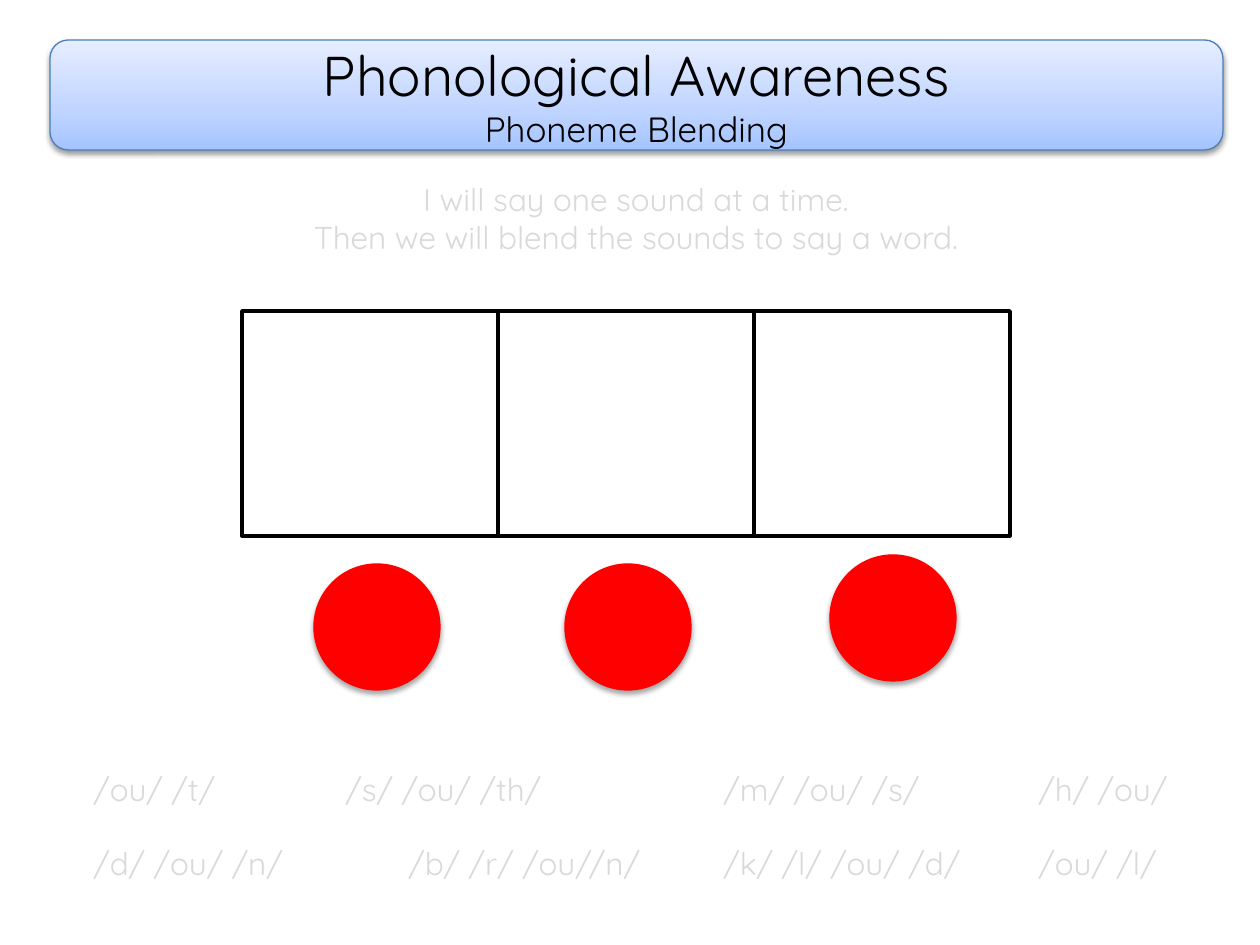
from lxml.etree import SubElement
from pptx import Presentation
from pptx.dml.color import RGBColor
from pptx.enum.shapes import MSO_SHAPE
from pptx.enum.text import MSO_ANCHOR, MSO_AUTO_SIZE, PP_ALIGN
from pptx.oxml import parse_xml
from pptx.oxml.ns import nsdecls, qn
from pptx.util import Pt

# Content
HEADING = [("Phonological Awareness", 32), ("Phoneme Blending", 20)]
INSTRUCTIONS = ["I will say one sound at a time.",
                "Then we will blend the sounds to say a word."]
WORD_ROWS = [  # words, tab stops in px, space before in pt
    (["/ou/ /t/", "/s/ /ou/ /th/", "/m/ /ou/ /s/", "/h/ /ou/"],
     [252, 630, 945], 0),
    (["/d/ /ou/ /n/", "/b/ /r/ /ou//n/", "/k/ /l/ /ou/ /d/", "/ou/ /l/"],
     [315, 630, 945], 20.5),
]
SOUND_BOXES = 3
COUNTERS = [(314, 564), (565, 564), (830, 555)]

# Style
FONT = "Quicksand"
BLACK = RGBColor(0, 0, 0)
WHITE = RGBColor(255, 255, 255)
RED = RGBColor(255, 0, 0)
GREY = RGBColor(0xD9, 0xD9, 0xD9)
BLUE = RGBColor(0x4B, 0x7E, 0xBC)
BANNER_STOPS = [(0, RGBColor(0xA4, 0xC4, 0xFF)),
                (35, RGBColor(0xBF, 0xD4, 0xFF)),
                (100, RGBColor(0xE6, 0xEE, 0xFF))]


def px(length):
    return round(length * 914400 / 126)


def add_text(frame, text, size=18, color=GREY, align=PP_ALIGN.LEFT,
             space=0, tabs=()):
    """Fill the first empty paragraph, or append one."""
    first = frame.paragraphs[0]
    para = frame.add_paragraph() if first.runs else first
    para.alignment = align
    para.space_before = Pt(space)
    if tabs:
        stops = SubElement(para._p.get_or_add_pPr(), qn("a:tabLst"))
        for position in tabs:
            SubElement(stops, qn("a:tab"), pos=str(px(position)), algn="l")
    span = para.add_run()
    span.text = text
    span.font.name = FONT
    span.font.size = Pt(size)
    span.font.color.rgb = color


def add_text_box(page, left, top, width, height):
    box = page.shapes.add_textbox(px(left), px(top), px(width), px(height))
    box.text_frame.word_wrap = True
    box.text_frame.auto_size = MSO_AUTO_SIZE.SHAPE_TO_FIT_TEXT
    return box.text_frame


def add_outline(parent, kind, left, top, width, height, fill, line, weight):
    shape = parent.shapes.add_shape(kind, px(left), px(top),
                                    px(width), px(height))
    shape.shadow.inherit = False
    if fill is not None:
        shape.fill.solid()
        shape.fill.fore_color.rgb = fill
    shape.line.color.rgb = line
    shape.line.width = Pt(weight)
    return shape


def add_shadow(shape, distance, opacity):
    effects = shape._element.spPr.find(qn("a:effectLst"))
    effects.append(parse_xml(
        f'<a:outerShdw {nsdecls("a")} blurRad="{Pt(3.1)}" '
        f'dist="{Pt(distance)}" dir="5400000" rotWithShape="0">'
        f'<a:srgbClr val="{BLACK}"><a:alpha val="{opacity * 1000}"/>'
        '</a:srgbClr></a:outerShdw>'))


def fill_gradient(shape, stops):
    marks = "".join(f'<a:gs pos="{position * 1000}"><a:srgbClr val="{color}"/>'
                    '</a:gs>' for position, color in stops)
    gradient = parse_xml(f'<a:gradFill {nsdecls("a")} rotWithShape="1">'
                         f'<a:gsLst>{marks}</a:gsLst>'
                         '<a:lin ang="16200000" scaled="0"/></a:gradFill>')
    shape._element.spPr.find(qn("a:prstGeom")).addnext(gradient)


def main():
    deck = Presentation()
    deck.slide_width, deck.slide_height = px(1260), px(945)
    page = deck.slides.add_slide(deck.slide_layouts[6])

    # Heading banner
    banner = add_outline(page, MSO_SHAPE.ROUNDED_RECTANGLE,
                         50, 40, 1173, 110, None, BLUE, 0.75)
    fill_gradient(banner, BANNER_STOPS)
    add_shadow(banner, 1.6, 38)
    banner.text_frame.vertical_anchor = MSO_ANCHOR.MIDDLE
    for text, size in HEADING:
        add_text(banner.text_frame, text, size=size, color=BLACK,
                 align=PP_ALIGN.CENTER)

    # Instructions
    frame = add_text_box(page, 81, 174, 1110, 127)
    for text in INSTRUCTIONS:
        add_text(frame, text, align=PP_ALIGN.CENTER)

    # Sound boxes
    boxes = page.shapes.add_group_shape()
    for index in range(SOUND_BOXES):
        add_outline(boxes, MSO_SHAPE.RECTANGLE, 242 + index * 256, 311,
                    256, 225, WHITE, BLACK, 2)

    # Counters
    counters = page.shapes.add_group_shape()
    for left, top in COUNTERS:
        counter = add_outline(counters, MSO_SHAPE.OVAL, left, top,
                              126, 126, RED, RED, 0.75)
        add_shadow(counter, 1.8, 35)

    # Words to blend
    frame = add_text_box(page, 81, 764, 1110, 127)
    for words, tabs, space in WORD_ROWS:
        add_text(frame, "\t".join(words), space=space, tabs=tabs)

    deck.save("out.pptx")


if __name__ == "__main__":
    main()
